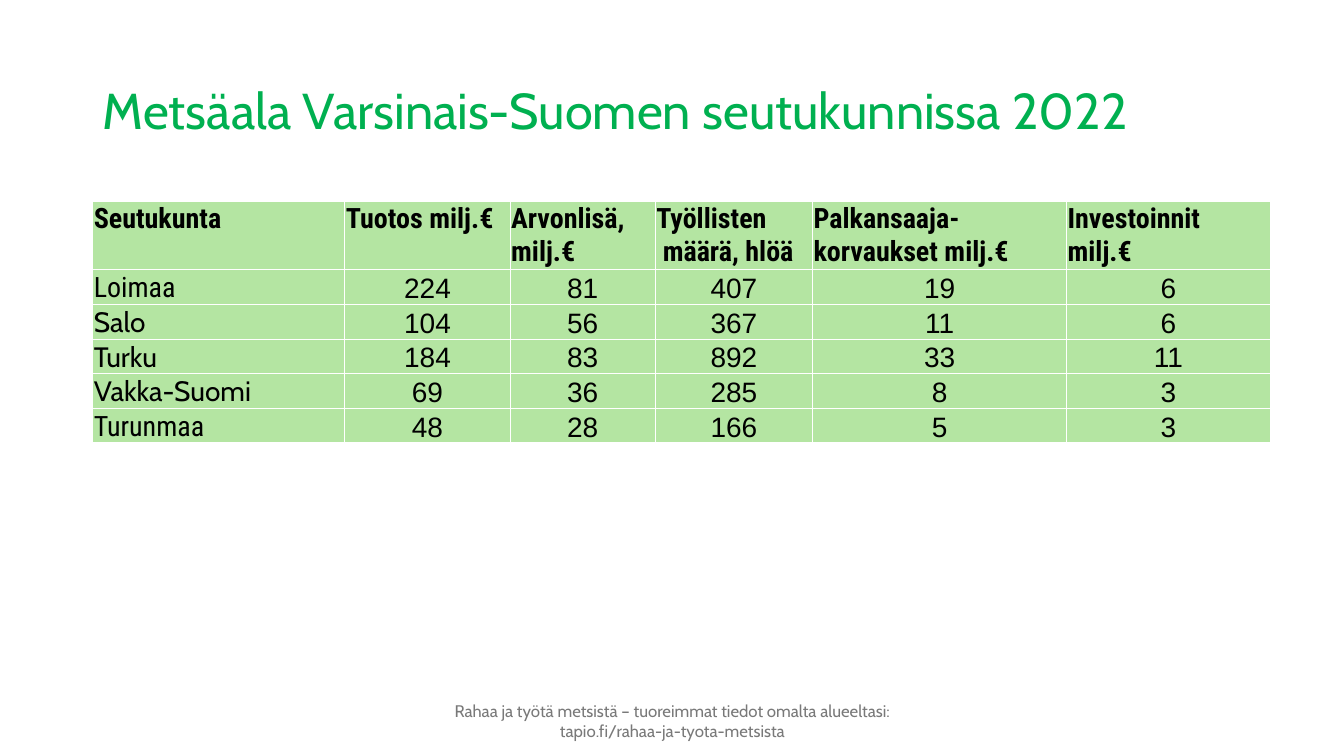
from dataclasses import dataclass

from lxml import etree
from pptx import Presentation
from pptx import util as u
from pptx.dml.color import RGBColor
from pptx.enum import text
from pptx.oxml import ns

PX = 9144  # one hundredth of an inch


@dataclass(frozen=True)
class Theme:
    title_color: str = "00B050"
    text_color: str = "000000"
    footer_color: str = "797979"
    cell_color: str = "B4E5A2"
    border_color: str = "FFFFFF"
    title_size: int = 36
    table_size: int = 20
    footer_size: int = 12
    main_font: str = "Cabin"
    condensed_font: str = "Roboto Condensed"
    number_font: str = "Arial"


def write(frame, content, *, font, size, color, bold=False, align="LEFT", spacing=None):
    """Fill a text frame, one paragraph for each line of content."""
    frame.text = content
    for paragraph in frame.paragraphs:
        paragraph.alignment = getattr(text.PP_ALIGN, align)
        if spacing:
            paragraph.line_spacing = spacing
        for run in paragraph.runs:
            run.font.name = font
            run.font.size = u.Pt(size)
            run.font.bold = bold
            run.font.color.rgb = RGBColor.from_string(color)


class SlideBuilder:
    def __init__(self, presentation, theme):
        self.theme = theme
        self.slide = presentation.slides.add_slide(presentation.slide_layouts[5])

    def title(self, content, *box):
        shape = self.slide.shapes.title
        shape.left, shape.top, shape.width, shape.height = [n * PX for n in box]
        frame = shape.text_frame
        frame.auto_size = text.MSO_AUTO_SIZE.NONE
        frame.vertical_anchor = text.MSO_ANCHOR.MIDDLE
        write(frame, content, font=self.theme.main_font, size=self.theme.title_size,
              color=self.theme.title_color, spacing=0.9)

    def footer(self, content, *box):
        frame = self.slide.shapes.add_textbox(*[n * PX for n in box]).text_frame
        frame.word_wrap = True
        frame.vertical_anchor = text.MSO_ANCHOR.MIDDLE
        write(frame, content, font=self.theme.main_font, size=self.theme.footer_size,
              color=self.theme.footer_color, align="CENTER")

    def borders(self, cell):
        properties = cell._tc.get_or_add_tcPr()
        for side in ("lnL", "lnR", "lnT", "lnB"):
            line = etree.SubElement(properties, ns.qn(f"a:{side}"), w=str(u.Pt(1)))
            fill = etree.SubElement(line, ns.qn("a:solidFill"))
            etree.SubElement(fill, ns.qn("a:srgbClr"), val=self.theme.border_color)

    def cell(self, cell, content, inset=1, anchor="BOTTOM", **style):
        cell.margin_left = cell.margin_right = cell.margin_top = inset * PX
        cell.margin_bottom = 0
        cell.vertical_anchor = getattr(text.MSO_ANCHOR, anchor)
        self.borders(cell)
        cell.fill.solid()
        cell.fill.fore_color.rgb = RGBColor.from_string(self.theme.cell_color)
        write(cell.text_frame, content, size=self.theme.table_size,
              color=self.theme.text_color, **style)

    def table(self, headings, regions, left, top, widths, header_height, row_height):
        heights = [header_height] + [row_height] * len(regions)
        table = self.slide.shapes.add_table(
            len(heights), len(widths), left * PX, top * PX,
            sum(widths) * PX, sum(heights) * PX).table
        table.first_row = table.horz_banding = False
        for column, width in zip(table.columns, widths):
            column.width = width * PX
        for row, height in zip(table.rows, heights):
            row.height = height * PX
        for column, heading in enumerate(headings):
            self.cell(table.cell(0, column), heading, anchor="TOP",
                      font=self.theme.condensed_font, bold=True)
        for row, (region, font, *values) in enumerate(regions, start=1):
            self.cell(table.cell(row, 0), region, font=font)
            for column, value in enumerate(values, start=1):
                self.cell(table.cell(row, column), str(value), inset=0,
                          font=self.theme.number_font, align="CENTER")


def main():
    presentation = Presentation()
    presentation.slide_width, presentation.slide_height = 1333 * PX, 750 * PX
    theme = Theme()
    builder = SlideBuilder(presentation, theme)

    # Title
    builder.title("Metsäala Varsinais-Suomen seutukunnissa 2022", 92, 40, 1150, 145)

    # Footer
    builder.footer("Rahaa ja työtä metsistä – tuoreimmat tiedot omalta alueeltasi: "
                   "tapio.fi/rahaa-ja-tyota-metsista", 426, 695, 482, 40)

    # Forestry figures by region
    headings = ["Seutukunta", "Tuotos milj.€", "Arvonlisä, milj.€",
                "Työllisten\n määrä, hlöä", "Palkansaaja-korvaukset milj.€",
                "Investoinnit\nmilj.€"]
    regions = [
        ("Loimaa", theme.condensed_font, 224, 81, 407, 19, 6),
        ("Salo", theme.main_font, 104, 56, 367, 11, 6),
        ("Turku", theme.main_font, 184, 83, 892, 33, 11),
        ("Vakka-Suomi", theme.main_font, 69, 36, 285, 8, 3),
        ("Turunmaa", theme.condensed_font, 48, 28, 166, 5, 3),
    ]
    builder.table(headings, regions, left=92, top=200,
                  widths=[250, 164, 144, 156, 252, 202], header_height=65, row_height=33)

    presentation.save("out.pptx")


if __name__ == "__main__":
    main()
